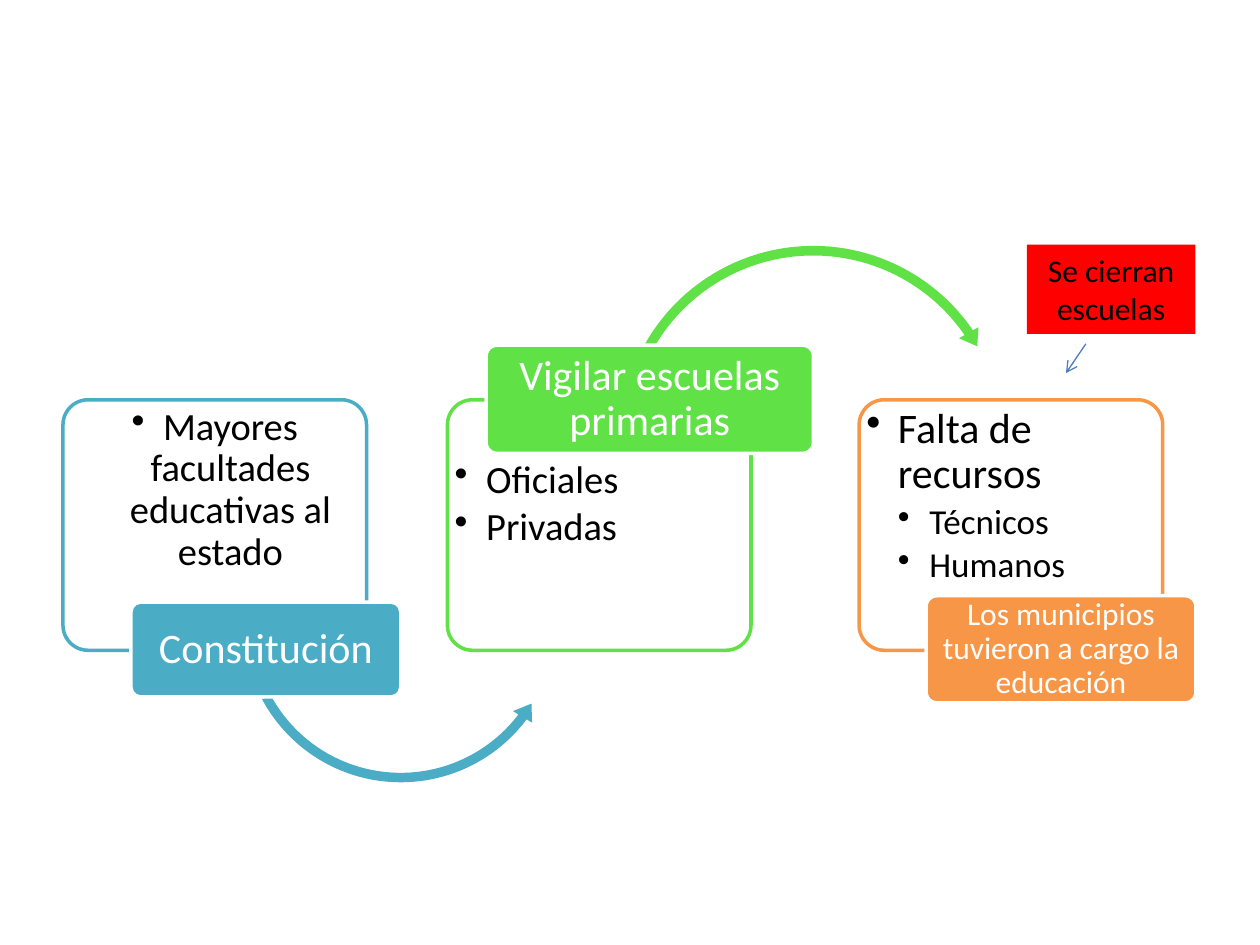
from dataclasses import dataclass
from typing import Optional

from lxml.etree import SubElement
from pptx import Presentation
from pptx.dml.color import RGBColor
from pptx.enum.shapes import MSO_CONNECTOR, MSO_SHAPE
from pptx.enum.text import MSO_ANCHOR, PP_ALIGN
from pptx.oxml.ns import qn
from pptx.util import Cm, Pt

WHITE = RGBColor(0xFF, 0xFF, 0xFF)
BLACK = RGBColor(0x00, 0x00, 0x00)
TEAL = RGBColor(0x4B, 0xAC, 0xC6)
GREEN = RGBColor(0x60, 0xE1, 0x46)
ORANGE = RGBColor(0xF7, 0x96, 0x46)
RED = RGBColor(0xFF, 0x00, 0x00)
BLUE = RGBColor(0x4B, 0x7E, 0xBC)

FONT = "Calibri"
PANEL_TOP, PANEL_WIDTH, PANEL_HEIGHT = 8.06, 6.12, 5.05
BULLET_INDENT = 0.635


@dataclass(frozen=True)
class Box:
    left: float
    top: float
    width: float
    height: float


@dataclass(frozen=True)
class Bullet:
    text: str
    size: int
    level: int = 1


@dataclass(frozen=True)
class Arrow:
    kind: MSO_SHAPE
    box: Box
    adjustments: tuple[float, ...]


@dataclass(frozen=True)
class Stage:
    color: RGBColor
    panel_left: float
    text_top: float
    alignment: PP_ALIGN
    bullets: tuple[Bullet, ...]
    label: str
    label_size: int
    label_box: Box
    arrow: Optional[Arrow] = None


STAGES = (
    Stage(TEAL, 1.27, 0, PP_ALIGN.CENTER,
          (Bullet("Mayores facultades educativas al estado", 22),),
          "Constitución", 24, Box(2.64, 12.14, 5.44, 1.91),
          Arrow(MSO_SHAPE.LEFT_CIRCULAR_ARROW, Box(4.78, 9.3, 6.6, 6.6),
                (0.029, 3.606, 22.224, 91.108, 0.034))),
    Stage(GREEN, 9.02, 1.07, PP_ALIGN.LEFT,
          (Bullet("Oficiales", 22), Bullet("Privadas", 22)),
          "Vigilar escuelas primarias", 24, Box(9.8, 6.96, 6.6, 2.18),
          Arrow(MSO_SHAPE.CIRCULAR_ARROW, Box(12.37, 4.83, 8.05, 8.05),
                (0.024, 2.923, 195.364, 125.797, 0.028))),
    Stage(ORANGE, 17.32, 0, PP_ALIGN.LEFT,
          (Bullet("Falta de recursos", 24), Bullet("Técnicos", 20, 2), Bullet("Humanos", 20, 2)),
          "Los municipios tuvieron a cargo la educación", 18, Box(18.67, 12.01, 5.44, 2.16)),
)


def add_filled_shape(slide, kind: MSO_SHAPE, box: Box, fill: RGBColor,
                     line: Optional[RGBColor] = None):
    shape = slide.shapes.add_shape(kind, Cm(box.left), Cm(box.top), Cm(box.width), Cm(box.height))
    shape.shadow.inherit = False
    shape.fill.solid()
    shape.fill.fore_color.rgb = fill
    if line is None:
        shape.line.fill.background()
    else:
        shape.line.color.rgb = line
        shape.line.width = Pt(2)
    return shape


def add_rounded_box(slide, box: Box, fill: RGBColor, line: RGBColor):
    shape = add_filled_shape(slide, MSO_SHAPE.ROUNDED_RECTANGLE, box, fill, line)
    shape.adjustments[0] = 0.1
    return shape


def set_margins(text_frame, side: float, top: float, bottom: float) -> None:
    text_frame.margin_left = text_frame.margin_right = Cm(side)
    text_frame.margin_top, text_frame.margin_bottom = Cm(top), Cm(bottom)


def format_paragraph(paragraph, size: int, color: RGBColor, alignment: PP_ALIGN) -> None:
    paragraph.alignment = alignment
    for run in paragraph.runs:
        run.font.name = FONT
        run.font.size = Pt(size)
        run.font.color.rgb = color


def add_bullet(paragraph, level: int) -> None:
    paragraph.level = level
    properties = paragraph._p.get_or_add_pPr()
    properties.set("marL", str(Cm(BULLET_INDENT * level)))
    properties.set("indent", str(-Cm(BULLET_INDENT)))
    SubElement(properties, qn("a:buChar")).set("char", "•")


def draw_panel(slide, stage: Stage) -> None:
    box = Box(stage.panel_left, PANEL_TOP, PANEL_WIDTH, PANEL_HEIGHT)
    panel = add_rounded_box(slide, box, WHITE, stage.color)
    text_frame = panel.text_frame
    text_frame.word_wrap = True
    text_frame.vertical_anchor = MSO_ANCHOR.TOP
    set_margins(text_frame, 0, stage.text_top, 0)
    text_frame.text = "\n".join(bullet.text for bullet in stage.bullets)
    for paragraph, bullet in zip(text_frame.paragraphs, stage.bullets):
        add_bullet(paragraph, bullet.level)
        paragraph.line_spacing = 0.9
        paragraph.space_after = Pt(bullet.size * 0.15)
        format_paragraph(paragraph, bullet.size, BLACK, stage.alignment)


def draw_arrow(slide, arrow: Arrow, color: RGBColor) -> None:
    shape = add_filled_shape(slide, arrow.kind, arrow.box, color)
    for index, value in enumerate(arrow.adjustments):
        shape.adjustments[index] = value


def draw_label(slide, stage: Stage) -> None:
    label = add_rounded_box(slide, stage.label_box, stage.color, WHITE)
    text_frame = label.text_frame
    text_frame.word_wrap = True
    text_frame.vertical_anchor = MSO_ANCHOR.MIDDLE
    set_margins(text_frame, 0.05, 0.02, 0.02)
    text_frame.text = stage.label
    paragraph = text_frame.paragraphs[0]
    paragraph.line_spacing = 0.9
    format_paragraph(paragraph, stage.label_size, WHITE, PP_ALIGN.CENTER)


def draw_closure_note(slide) -> None:
    note = add_filled_shape(slide, MSO_SHAPE.RECTANGLE, Box(20.7, 4.93, 3.4, 1.8), RED)
    note.text_frame.word_wrap = True
    note.text_frame.text = "Se cierran escuelas"
    format_paragraph(note.text_frame.paragraphs[0], 18, BLACK, PP_ALIGN.CENTER)

    pointer = slide.shapes.add_connector(
        MSO_CONNECTOR.STRAIGHT, Cm(21.89), Cm(6.93), Cm(21.49), Cm(7.52))
    pointer.line.color.rgb = BLUE
    pointer.line.width = Pt(0.75)
    SubElement(pointer.line._get_or_add_ln(), qn("a:tailEnd")).set("type", "arrow")
    SubElement(pointer._element.spPr, qn("a:effectLst"))


def main() -> None:
    presentation = Presentation()
    presentation.slide_width, presentation.slide_height = Cm(25.4), Cm(19.05)
    slide = presentation.slides.add_slide(presentation.slide_layouts[6])
    for stage in STAGES:
        draw_panel(slide, stage)
        if stage.arrow:
            draw_arrow(slide, stage.arrow, stage.color)
        draw_label(slide, stage)
    draw_closure_note(slide)
    presentation.save("out.pptx")


if __name__ == "__main__":
    main()
